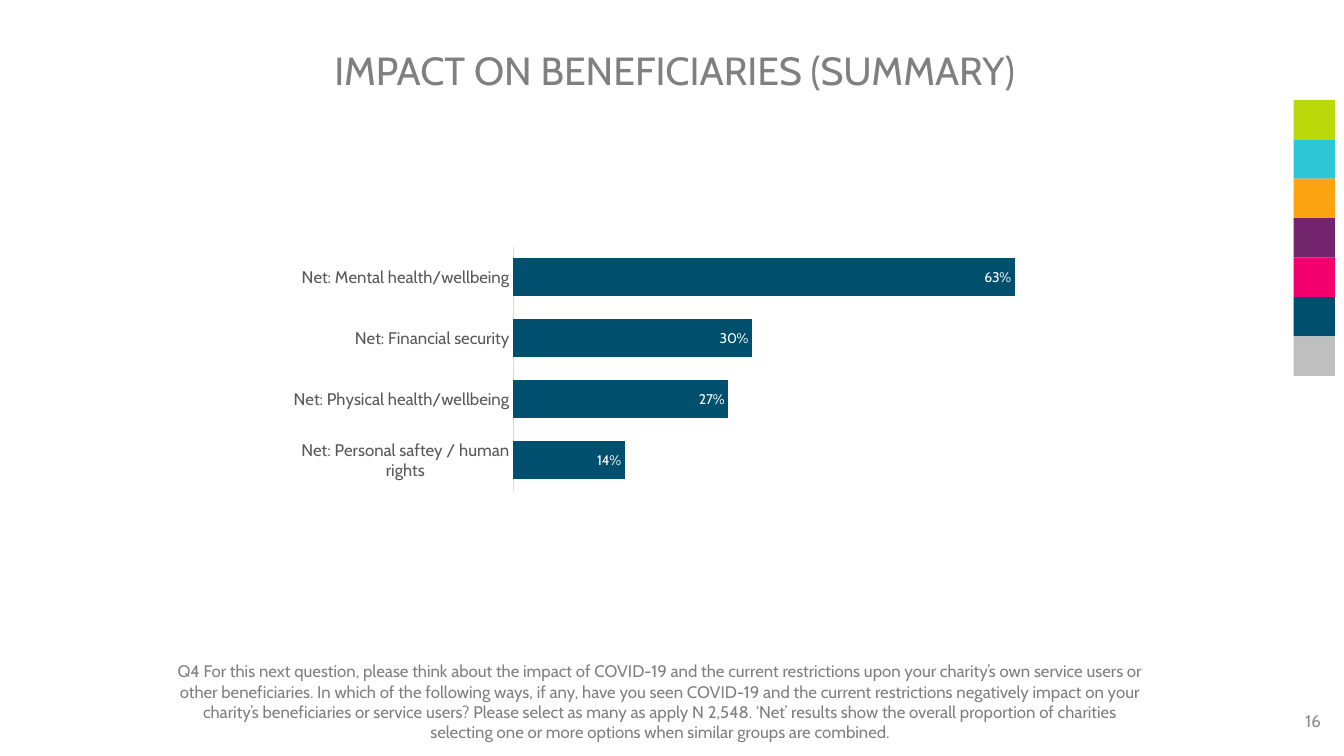
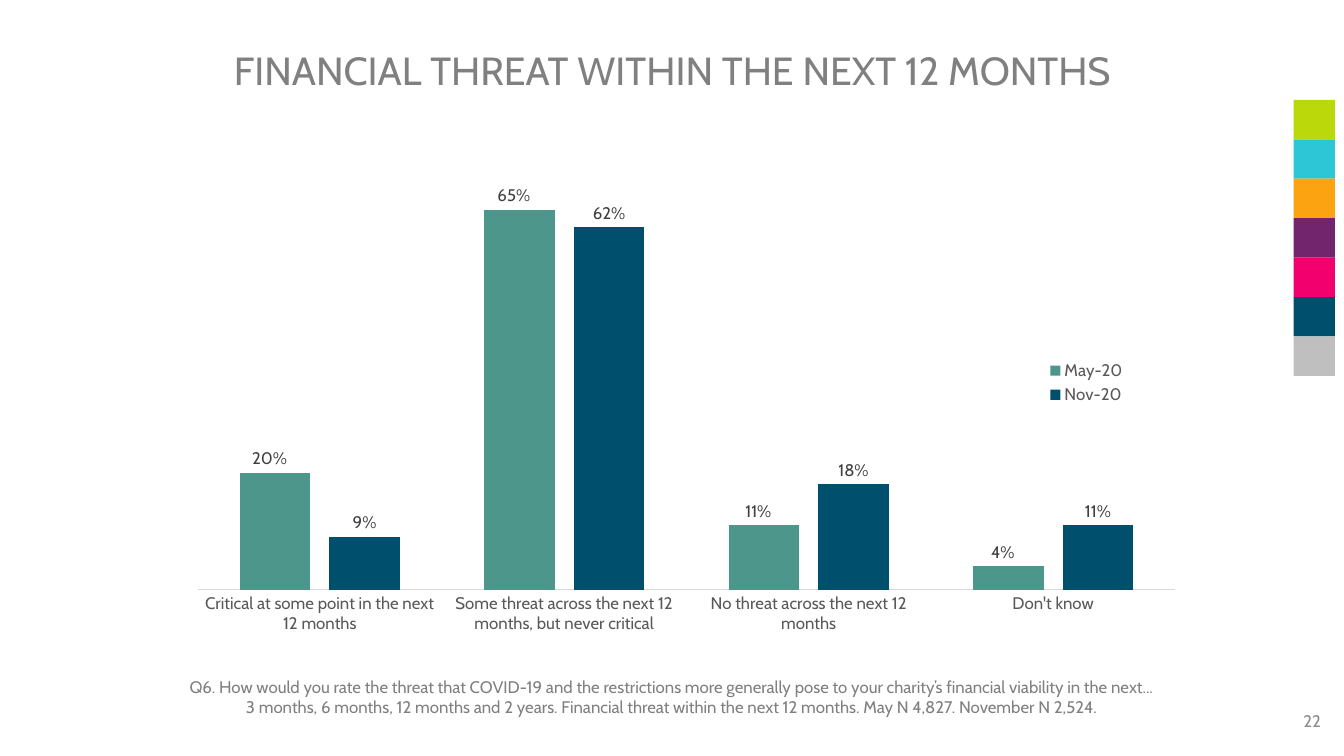
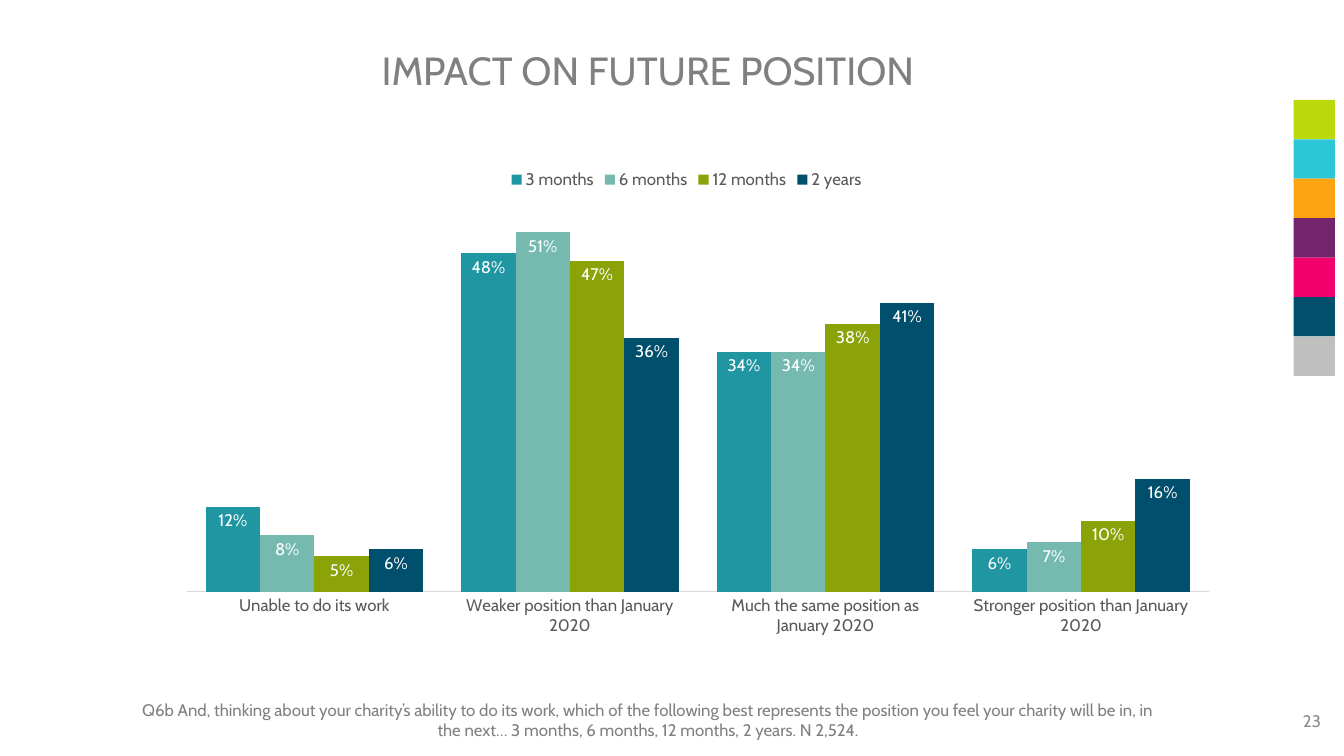
from pptx import Presentation
from pptx.chart.data import CategoryChartData
from pptx.dml.color import RGBColor
from pptx.enum.chart import XL_CHART_TYPE, XL_LABEL_POSITION, XL_LEGEND_POSITION, XL_TICK_MARK
from pptx.enum.shapes import MSO_SHAPE
from pptx.enum.text import MSO_ANCHOR, PP_ALIGN
from pptx.oxml import parse_xml
from pptx.oxml.ns import nsdecls, qn
from pptx.util import Inches, Pt

BAR, COLUMN = XL_CHART_TYPE.BAR_CLUSTERED, XL_CHART_TYPE.COLUMN_CLUSTERED
INSIDE, OUTSIDE = XL_LABEL_POSITION.INSIDE_END, XL_LABEL_POSITION.OUTSIDE_END
TOP, RIGHT = XL_LEGEND_POSITION.TOP, XL_LEGEND_POSITION.RIGHT
NO_TICK = XL_TICK_MARK.NONE
RECT = MSO_SHAPE.RECTANGLE
ANCHOR_TOP, ANCHOR_MIDDLE = MSO_ANCHOR.TOP, MSO_ANCHOR.MIDDLE
ALIGN_CENTER, ALIGN_RIGHT = PP_ALIGN.CENTER, PP_ALIGN.RIGHT

COLORS = {
    "lime": "BAD80A", "cyan": "2DC6D6", "orange": "FCA311", "purple": "72246C",
    "pink": "F2006E", "navy": "004F6D", "silver": "BFBFBF",
    "teal": "2096A3", "sage": "76B9AF", "olive": "8BA208", "green": "4D968B",
    "text": "808080", "number": "8C8C8C", "axis_text": "595959",
    "axis_line": "D9D9D9", "label": "404040", "white": "FFFFFF", "black": "000000",
}
RGB = {name: RGBColor.from_string(value) for name, value in COLORS.items()}
STRIP = ["lime", "cyan", "orange", "purple", "pink", "navy", "silver"]
FONT = "Cabin"

# Text styles
TITLE = {"size": 28, "color": "text", "align": ALIGN_CENTER, "anchor": ANCHOR_MIDDLE, "spacing": 0.9}
NOTE = {"size": 12, "color": "text", "align": ALIGN_CENTER, "anchor": ANCHOR_TOP, "spacing": 1.0}
NUMBER = {"size": 12, "color": "number", "align": ALIGN_RIGHT, "anchor": ANCHOR_MIDDLE, "spacing": 1.0}

# Each series: name, values, colour, label number format
SLIDES = [
    {
        "title": "IMPACT ON BENEFICIARIES (SUMMARY)", "title_at": (0.94, 0, 11.5, 1.45),
        "number": "16",
        "note": ["Q4 For this next question, please think about the impact of COVID-19 and the current "
                 "restrictions upon your charity’s own service users or other beneficiaries. In which of "
                 "the following ways, if any, have you seen COVID-19 and the current restrictions "
                 "negatively impact on your charity’s beneficiaries or service users? Please select as "
                 "many as apply N 2,548. ‘Net’ results show the overall proportion of charities selecting "
                 "one or more options when similar groups are combined."],
        "note_at": (1.62, 6.51, 9.86, 0.99),
        "chart": BAR, "chart_at": (2.77, 2.4, 8.01, 2.52), "plot_at": (0.29, 0.02, 0.69, 0.96),
        "max": 0.7, "gap": 60, "overlap": 0, "reverse": True,
        "legend": None, "legend_at": None,
        "labels": {"size": 10, "color": "white", "position": INSIDE},
        "categories": ["Net: Mental health/wellbeing", "Net: Financial security",
                       "Net: Physical health/wellbeing", "Net: Personal saftey / human rights"],
        "series": [("Series 1", (0.63, 0.3, 0.27, 0.14), "navy", "0%")],
    },
    {
        "title": "FINANCIAL THREAT WITHIN THE NEXT 12 MONTHS", "title_at": (0.85, 0, 11.63, 1.45),
        "number": "22",
        "note": ["Q6. How would you rate the threat that COVID-19 and the restrictions more generally "
                 "pose to your charity’s financial viability in the next...",
                 "3 months, 6 months, 12 months and 2 years. Financial threat within the next 12 months. "
                 "May N 4,827. November N 2,524."],
        "note_at": (1.35, 6.66, 10.63, 0.5),
        "chart": COLUMN, "chart_at": (1.74, 1.65, 11.02, 4.72), "plot_at": (0.02, 0.03, 0.88, 0.86),
        "max": 0.7, "gap": 120, "overlap": -27, "reverse": False,
        "legend": RIGHT, "legend_at": (0.78, 0.4, 0.08, 0.11),
        "labels": {"size": 12, "color": "label", "position": OUTSIDE},
        "categories": ["Critical at some point in the next 12 months",
                       "Some threat across the next 12 months, but never critical",
                       "No threat across the next 12 months", "Don't know"],
        "series": [("May-20", (0.2, 0.65, 0.11, 0.04), "green", r"0%\ \ \ "),
                   ("Nov-20", (0.09, 0.62, 0.18, 0.11), "navy", "0%")],
    },
    {
        "title": "IMPACT ON FUTURE POSITION", "title_at": (2.88, 0, 7.09, 1.45),
        "number": "23",
        "note": ["Q6b And, thinking about your charity’s ability to do its work, which of the following "
                 "best represents the position you feel your charity will be in, in the next… 3 months, "
                 "6 months, 12 months, 2 years. N 2,524."],
        "note_at": (1.2, 6.89, 10.46, 0.5),
        "chart": COLUMN, "chart_at": (1.3, 1.57, 11.02, 5.31), "plot_at": (0.05, 0.02, 0.92, 0.79),
        "max": 0.6, "gap": 70, "overlap": 0, "reverse": False,
        "legend": TOP, "legend_at": None,
        "labels": {"size": 12, "color": "white", "position": INSIDE},
        "categories": ["Unable to do its work", "Weaker position than January 2020",
                       "Much the same position as January 2020", "Stronger position than January 2020"],
        "series": [("3 months", (0.12, 0.48, 0.34, 0.06), "teal", "0%"),
                   ("6 months", (0.08, 0.51, 0.34, 0.07), "sage", "0%"),
                   ("12 months", (0.05, 0.47, 0.38, 0.1), "olive", "0%"),
                   ("2 years", (0.06, 0.36, 0.41, 0.16), "navy", "0%")],
    },
]


def add_text(s, at, lines, style):
    tf = s.shapes.add_textbox(*map(Inches, at)).text_frame
    tf.word_wrap = True
    tf.vertical_anchor = style["anchor"]
    for i, line in enumerate(lines):
        p = tf.paragraphs[0] if i == 0 else tf.add_paragraph()
        p.alignment, p.line_spacing = style["align"], style["spacing"]
        r = p.add_run()
        r.text = line
        r.font.name, r.font.size = FONT, Pt(style["size"])
        r.font.color.rgb = RGB[style["color"]]


def set_layout(parent, index, at, target=""):
    """Place a plot area or legend by fractions of the chart."""
    for old in parent.findall(qn("c:layout")):
        parent.remove(old)
    modes = '<c:xMode val="edge"/><c:yMode val="edge"/>'
    sizes = "".join(f'<c:{k} val="{v}"/>' for k, v in zip("xywh", at))
    parent.insert(index, parse_xml(
        f'<c:layout {nsdecls("c")}><c:manualLayout>{target}{modes}{sizes}</c:manualLayout></c:layout>'))


prs = Presentation()
prs.slide_width, prs.slide_height = Inches(13.33), Inches(7.5)

for data in SLIDES:
    s = prs.slides.add_slide(prs.slide_layouts[6])

    # Colour strip
    for i, name in enumerate(STRIP):
        sp = s.shapes.add_shape(RECT, Inches(12.83), Inches(0.99 + i * 2.35 / 6), Inches(0.41), Inches(0.39))
        sp.shadow.inherit = False
        sp.fill.solid()
        sp.fill.fore_color.rgb = RGB[name]
        sp.line.fill.background()

    # Title, question and slide number
    add_text(s, data["title_at"], [data["title"]], TITLE)
    add_text(s, data["note_at"], data["note"], NOTE)
    add_text(s, (10.2, 6.95, 3, 0.4), [data["number"]], NUMBER)

    # Chart
    chart_data = CategoryChartData(number_format="0%")
    chart_data.categories = data["categories"]
    for name, values, _, _ in data["series"]:
        chart_data.add_series(name, values)
    chart = s.shapes.add_chart(data["chart"], *map(Inches, data["chart_at"]), chart_data).chart
    chart.has_title = False
    chart.font.name, chart.font.size = "Calibri", Pt(10)
    chart.font.color.rgb = RGB["black"]
    set_layout(chart._chartSpace.chart.plotArea, 0, data["plot_at"], '<c:layoutTarget val="inner"/>')

    # Axes
    value_axis, cat_axis = chart.value_axis, chart.category_axis
    value_axis.minimum_scale, value_axis.maximum_scale = 0, data["max"]
    value_axis.has_major_gridlines = value_axis.visible = False
    cat_axis.major_tick_mark = cat_axis.minor_tick_mark = NO_TICK
    cat_axis.reverse_order = data["reverse"]
    cat_axis.format.line.color.rgb = RGB["axis_line"]
    cat_axis.format.line.width = Pt(0.75)
    axis_fonts = [cat_axis.tick_labels.font]

    # Legend
    chart.has_legend = data["legend"] is not None
    if chart.has_legend:
        legend = chart.legend
        legend.position = data["legend"]
        legend.include_in_layout = False
        axis_fonts.append(legend.font)
        if data["legend_at"]:
            set_layout(legend._element, 1, data["legend_at"])
    for font in axis_fonts:
        font.name, font.size = FONT, Pt(12)
        font.color.rgb = RGB["axis_text"]

    # Bars and their labels
    plot = chart.plots[0]
    plot.vary_by_categories = False
    plot.gap_width, plot.overlap = data["gap"], data["overlap"]
    style = data["labels"]
    for series, (_, _, color, number_format) in zip(plot.series, data["series"]):
        series.invert_if_negative = False
        series.format.fill.solid()
        series.format.fill.fore_color.rgb = RGB[color]
        labels = series.data_labels
        for key, value in {"show_value": True, "number_format": number_format,
                           "number_format_is_linked": False, "position": style["position"]}.items():
            setattr(labels, key, value)
        labels.font.name, labels.font.size = FONT, Pt(style["size"])
        labels.font.color.rgb = RGB[style["color"]]

prs.save("out.pptx")
